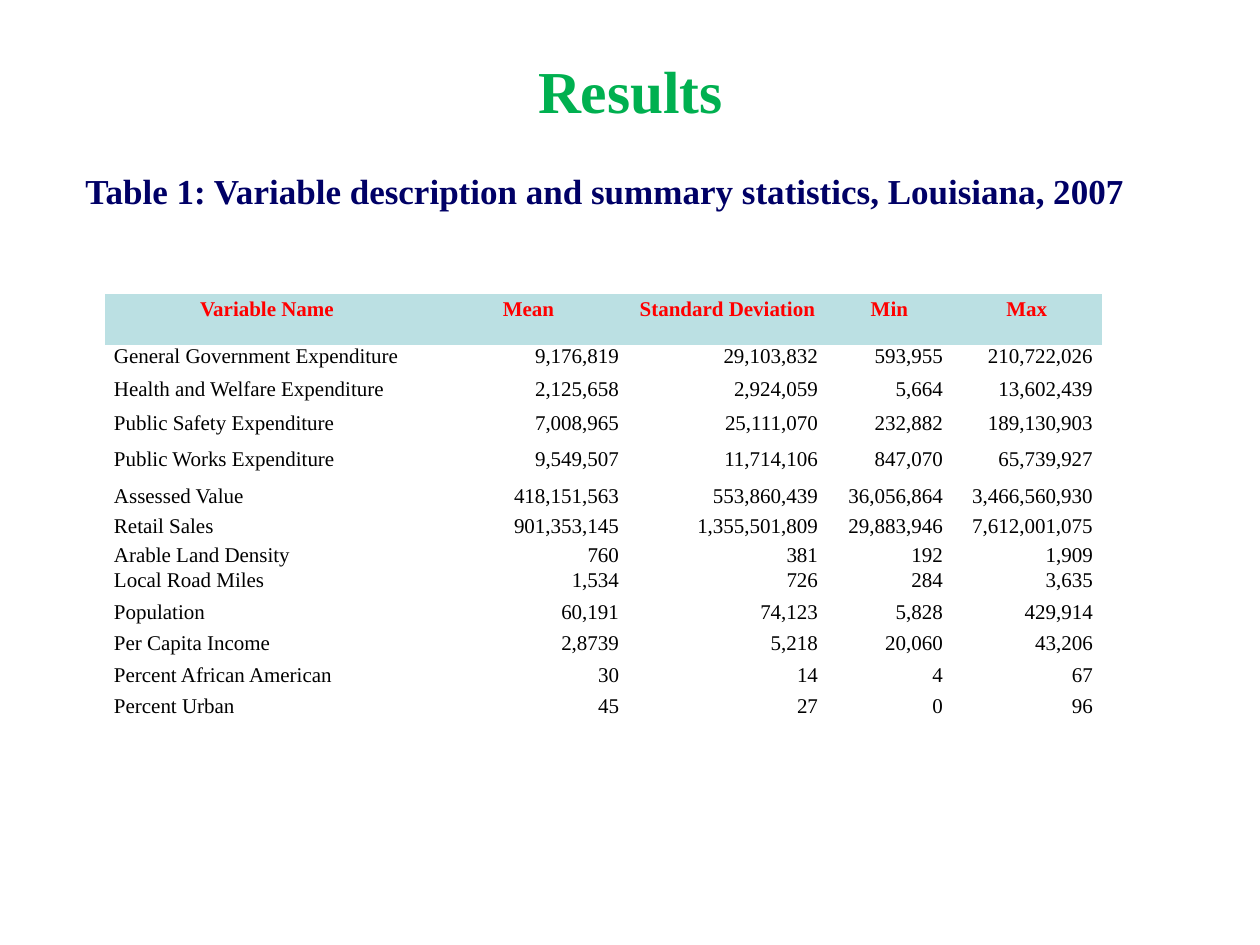
from pptx import Presentation
from pptx.dml.color import RGBColor
from pptx.enum.text import MSO_ANCHOR, PP_ALIGN
from pptx.util import Emu, Pt

CENTER, LEFT, RIGHT = PP_ALIGN.CENTER, PP_ALIGN.LEFT, PP_ALIGN.RIGHT
MIDDLE, TOP = MSO_ANCHOR.MIDDLE, MSO_ANCHOR.TOP
PX_PER_INCH = 126
TITLE_ONLY = 5
FONT = "Times New Roman"
NO_STYLE = "{2D5ABB26-0587-4C30-8999-92F81FD0307C}"
COLORS = {
    "title": "00B050",
    "caption": "000066",
    "header_text": "FF0000",
    "header_fill": "BBE0E3",
    "body": "000000",
}

COLUMN_WIDTHS = [324, 199, 199, 125, 150]
ROW_HEIGHTS = [51, 33, 34, 36, 37, 30, 29, 23, 32, 31, 32, 31, 32]
HEADERS = ["Variable Name", "Mean", "Standard Deviation", "Min", "Max"]
STATISTICS = [
    ["General Government Expenditure", "9,176,819", "29,103,832", "593,955", "210,722,026"],
    ["Health and Welfare Expenditure", "2,125,658", "2,924,059", "5,664", "13,602,439"],
    ["Public Safety Expenditure", "7,008,965", "25,111,070", "232,882", "189,130,903"],
    ["Public Works Expenditure", "9,549,507", "11,714,106", "847,070", "65,739,927"],
    ["Assessed Value", "418,151,563", "553,860,439", "36,056,864", "3,466,560,930"],
    ["Retail Sales", "901,353,145", "1,355,501,809", "29,883,946", "7,612,001,075"],
    ["Arable Land Density", "760", "381", "192", "1,909"],
    ["Local Road Miles", "1,534", "726", "284", "3,635"],
    ["Population", "60,191", "74,123", "5,828", "429,914"],
    ["Per Capita Income", "2,8739", "5,218", "20,060", "43,206"],
    ["Percent African American", "30", "14", "4", "67"],
    ["Percent Urban", "45", "27", "0", "96"],
]


def px(length):
    return Emu(round(length * 914400 / PX_PER_INCH))


def write_text(text_frame, text, size, color, bold, alignment):
    paragraph = text_frame.paragraphs[0]
    paragraph.alignment = alignment
    run = paragraph.add_run()
    run.text = text
    run.font.name = FONT
    run.font.size = Pt(size)
    run.font.bold = bold
    run.font.color.rgb = RGBColor.from_string(COLORS[color])
    return paragraph


def add_title(slide, text, left, top, width, height):
    title = slide.shapes.title
    title.left, title.top = px(left), px(top)
    title.width, title.height = px(width), px(height)
    title.text_frame.vertical_anchor = MIDDLE
    write_text(title.text_frame, text, 34, "title", True, CENTER)


def add_caption(slide, text, left, top, width, height):
    box = slide.shapes.add_textbox(px(left), px(top), px(width), px(height))
    box.text_frame.word_wrap = True
    write_text(box.text_frame, text, 20, "caption", True, CENTER)


def fill_cell(cell, text, is_header, alignment):
    cell.margin_left = cell.margin_right = px(9)
    cell.margin_top = cell.margin_bottom = 0
    cell.vertical_anchor = TOP
    if is_header:
        cell.fill.solid()
        cell.fill.fore_color.rgb = RGBColor.from_string(COLORS["header_fill"])
        paragraph = write_text(cell.text_frame, text, 12, "header_text", True, CENTER)
        paragraph.line_spacing = 1.15
    else:
        cell.fill.background()
        write_text(cell.text_frame, text, 12, "body", False, alignment)


def add_statistics_table(slide, left, top):
    rows = [HEADERS] + STATISTICS
    frame = slide.shapes.add_table(
        len(rows), len(HEADERS), px(left), px(top),
        px(sum(COLUMN_WIDTHS)), px(sum(ROW_HEIGHTS)))
    table = frame.table
    table.horz_banding = False
    # Plain table style, so that no cell borders show
    table._tbl.tblPr[0].text = NO_STYLE

    for column, width in zip(table.columns, COLUMN_WIDTHS):
        column.width = px(width)
    for row, height in zip(table.rows, ROW_HEIGHTS):
        row.height = px(height)
    for row_index, values in enumerate(rows):
        for column_index, value in enumerate(values):
            fill_cell(table.cell(row_index, column_index), value,
                      row_index == 0, RIGHT if column_index else LEFT)


def main():
    presentation = Presentation()
    presentation.slide_width, presentation.slide_height = px(1260), px(945)
    slide = presentation.slides.add_slide(presentation.slide_layouts[TITLE_ONLY])

    # Heading and table caption
    add_title(slide, "Results", 95, 32, 1071, 116)
    add_caption(slide, "Table 1: Variable description and summary statistics, Louisiana, 2007",
                17, 163, 1176, 634)

    # Summary statistics
    add_statistics_table(slide, 105, 294)

    presentation.save("out.pptx")


if __name__ == "__main__":
    main()
